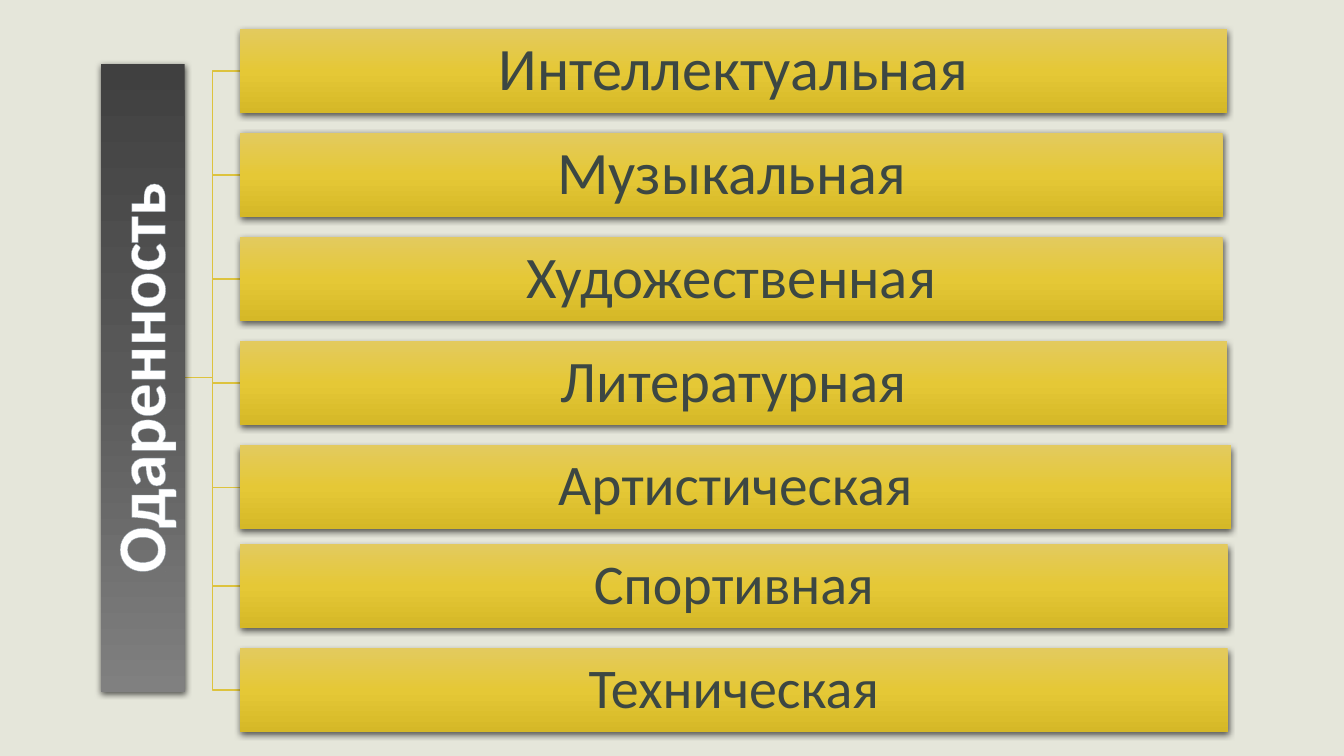
from pptx import Presentation
from pptx.dml.color import RGBColor as Rgb
from pptx.enum.shapes import MSO_SHAPE as Kind
from pptx.enum.text import MSO_ANCHOR as Anchor, PP_ALIGN as Align
from pptx.oxml import parse_xml as parse
from pptx.oxml.ns import nsdecls, qn
from pptx.util import Pt

GOLD = ("E3CA5E", "E5C836", "D5B827")
GREY = ("404040", "595959", "808080")
LEFT, TOP, STEP, HIGH = 171.4, 20.9, 74.3, 59.8
TALENTS = [
    ("Интеллектуальная", 705, 43, 0),
    ("Музыкальная", 702, 43, 0),
    ("Художественная", 702, 42, 0),
    ("Литературная", 705, 42, 0),
    ("Артистическая", 708, 41, 0),
    ("Спортивная", 705.6, 40, -3.6),
    ("Техническая", 705.6, 40, -3.6),
]


def tint(code):
    return Rgb.from_string(code)


def assign(item, values):
    for name, value in values.items():
        setattr(item, name, value)


class Board:
    """Hold the look of the slide and draw its bars and links."""

    font = "Calibri"
    ink = "3C4743"
    rule = "DDC33E"

    def __init__(self, deck, back):
        self.slide = deck.slides.add_slide(deck.slide_layouts[6])
        fill = self.slide.background.fill
        fill.solid()
        fill.fore_color.rgb = tint(back)

    def link(self, *spots):
        pen = self.slide.shapes.build_freeform(
            *(Pt(n) for n in spots[0]), scale=1.0)
        pen.add_line_segments(
            [(Pt(x), Pt(y)) for x, y in spots[1:]], close=False)
        shape = pen.convert_to_shape()
        shape.shadow.inherit = False
        shape.fill.background()
        shape.line.color.rgb = tint(self.rule)
        shape.line.width = Pt(1)

    def paint(self, shape, shades):
        shape.line.fill.background()
        shape.shadow.inherit = False
        stops = "".join(
            f'<a:gs pos="{i * 50000}"><a:srgbClr val="{code}"/></a:gs>'
            for i, code in enumerate(shades))
        props = shape.element.spPr
        props.find(qn("a:ln")).addprevious(parse(
            f'<a:gradFill {nsdecls("a")} rotWithShape="0">'
            f'<a:gsLst>{stops}</a:gsLst>'
            '<a:lin ang="5400000" scaled="0"/></a:gradFill>'))
        props.find(qn("a:effectLst")).append(parse(
            f'<a:outerShdw {nsdecls("a")} blurRad="{Pt(4.5)}" '
            f'dist="{Pt(1.5)}" dir="5400000" algn="ctr" rotWithShape="0">'
            '<a:srgbClr val="000000"><a:alpha val="63000"/></a:srgbClr>'
            '</a:outerShdw>'))

    def bar(self, text, box, size, shades=GOLD, ink=ink, bold=False, turn=0):
        shape = self.slide.shapes.add_shape(
            Kind.RECTANGLE, *(Pt(n) for n in box))
        shape.rotation = turn
        self.paint(shape, shades)
        frame = shape.text_frame
        sides = ("left", "top", "right", "bottom")
        assign(frame, {f"margin_{side}": Pt(2.2) for side in sides})
        assign(frame, {"word_wrap": True, "vertical_anchor": Anchor.MIDDLE})
        para = frame.paragraphs[0]
        assign(para, {"alignment": Align.CENTER, "line_spacing": 0.9})
        run = para.add_run()
        run.text = text
        assign(run.font, {"name": self.font, "size": Pt(size), "bold": bold})
        run.font.color.rgb = tint(ink)
        return run

    def edge(self, run, code, width):
        run.font.fill
        run._r.get_or_add_rPr().insert(0, parse(
            f'<a:ln {nsdecls("a")} w="{Pt(width)}"><a:solidFill>'
            f'<a:srgbClr val="{code}"/></a:solidFill></a:ln>'))


def main():
    deck = Presentation()
    assign(deck, {"slide_width": Pt(960), "slide_height": Pt(540)})
    board = Board(deck, "E5E6DA")
    tops = [TOP + STEP * i + row[3] for i, row in enumerate(TALENTS)]
    root, bend, mid = 132, 151.6, 269.8
    for top in reversed(tops):
        end = top + HIGH / 2
        board.link((root, mid), (bend, mid), (bend, end), (LEFT, end))
    long = 448.4
    title = board.bar(
        "Одаренность",
        (root - (long + HIGH) / 2, mid - HIGH / 2, long, HIGH),
        49, GREY, "FFFFFF", True, 270)
    board.edge(title, "96A1AA", 0.8)
    for top, (text, wide, size, _) in zip(tops, TALENTS):
        board.bar(text, (LEFT, top, wide, HIGH), size)
    deck.save("out.pptx")


if __name__ == "__main__":
    main()
